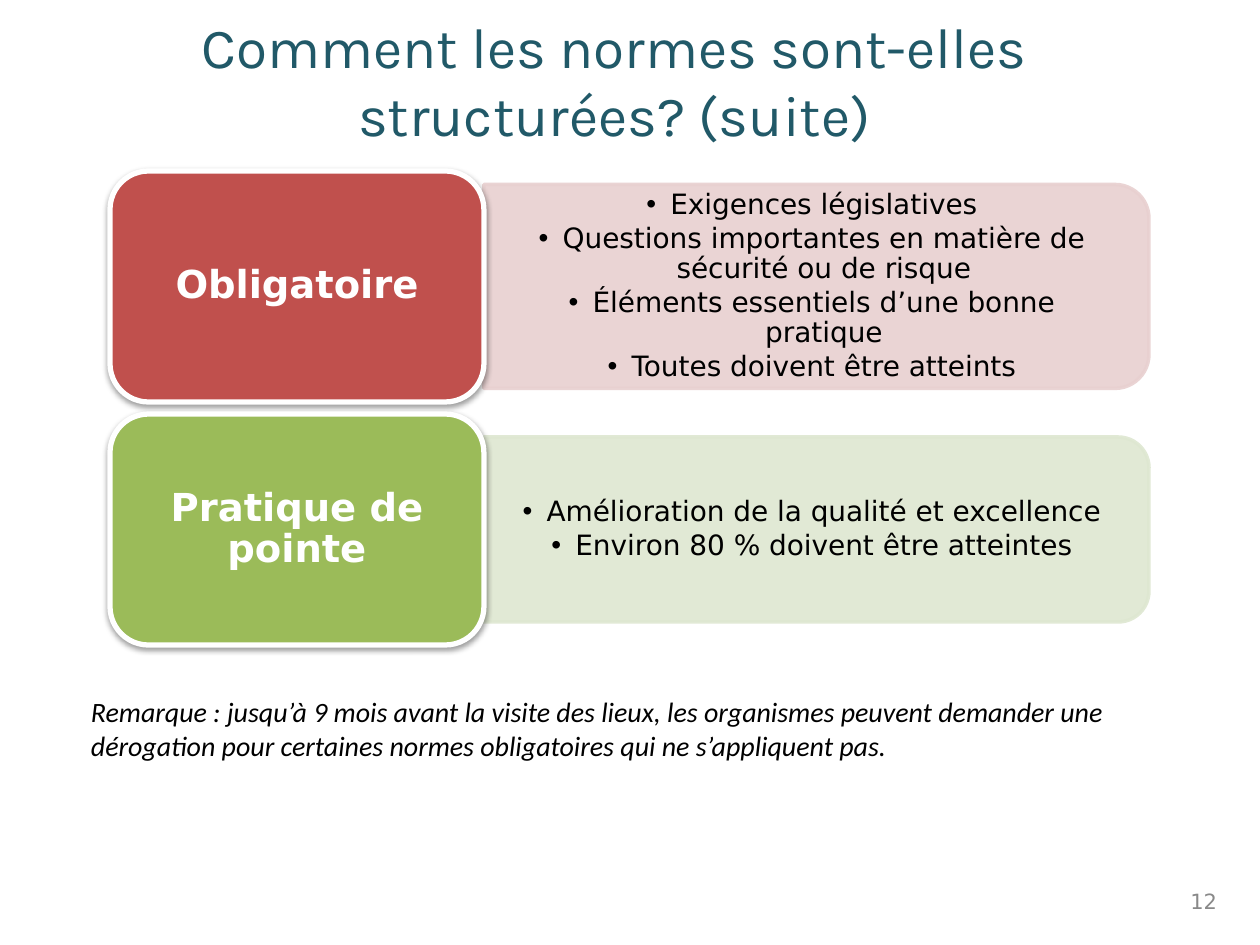
from lxml import etree
from pptx import Presentation, util as u
from pptx.dml.color import RGBColor
from pptx.enum import shapes, text
from pptx.oxml.ns import qn

PX = 914400 / 126
TEAL = RGBColor(0x21, 0x59, 0x68)
RED = RGBColor(0xC0, 0x50, 0x4D)
PALE_RED = RGBColor(0xE8, 0xD0, 0xD0)
GREEN = RGBColor(0x9B, 0xBB, 0x59)
PALE_GREEN = RGBColor(0xDE, 0xE7, 0xD1)
WHITE = RGBColor(255, 255, 255)
BLACK = RGBColor(0, 0, 0)
GREY = RGBColor(0x89, 0x89, 0x89)
SANS = "DejaVu Sans"
ALIGN = text.PP_ALIGN


def px(*lengths):
    return [u.Emu(round(n * PX)) for n in lengths]


def write(shape, lines, font=SANS, size=16, color=BLACK, bold=False, italic=False,
          align=ALIGN.CENTER, anchor=text.MSO_ANCHOR.MIDDLE, spacing=None,
          gap=0, bullet_indent=0, insets=(13, 6)):
    """Fill a shape with paragraphs in one format."""
    frame = shape.text_frame
    frame.word_wrap = True
    frame.auto_size = text.MSO_AUTO_SIZE.NONE
    frame.vertical_anchor = anchor
    frame.margin_left = frame.margin_right = px(insets[0])[0]
    frame.margin_top = frame.margin_bottom = px(insets[1])[0]
    frame.text = "\n".join(lines)
    for paragraph in frame.paragraphs:
        paragraph.alignment = align
        paragraph.line_spacing = spacing
        paragraph.space_before = u.Pt(0)
        paragraph.space_after = u.Pt(gap)
        if bullet_indent:
            props = paragraph._p.get_or_add_pPr()
            indent = px(bullet_indent)[0]
            props.set("marL", str(indent))
            props.set("indent", str(-indent))
            etree.SubElement(props, qn("a:buChar"), char="•")
        for run in paragraph.runs:
            run.font.name, run.font.size = font, u.Pt(size)
            run.font.bold, run.font.italic = bold, italic
            run.font.color.rgb = color


class StandardsSlide:
    def __init__(self, prs, layout):
        self.slide = prs.slides.add_slide(prs.slide_layouts[layout])

    def place(self, shape, left, top, width, height):
        shape.left, shape.top, shape.width, shape.height = px(left, top, width, height)
        return shape

    def title(self, box, words):
        write(self.place(self.slide.shapes.title, *box), [words],
              font="Karla", size=32.4, color=TEAL)

    def label(self, box, words, **style):
        write(self.slide.shapes.add_textbox(*px(*box)), [words], **style)

    def shape(self, kind, box, fill, line, weight):
        shape = self.slide.shapes.add_shape(kind, *px(*box))
        shape.shadow.inherit = False
        shape.fill.solid()
        shape.fill.fore_color.rgb = fill
        shape.line.color.rgb = line
        shape.line.width = u.Pt(weight)
        return shape

    def panel(self, left, middle, width, height, color):
        """Strip with rounded right corners: an upright shape turned by 90°."""
        box = (left + (width - height) / 2, middle - width / 2, height, width)
        panel = self.shape(shapes.MSO_SHAPE.ROUND_2_SAME_RECTANGLE, box, color, color, 2)
        panel.rotation = 90
        for tint in panel.element.spPr.iter(qn("a:srgbClr")):
            etree.SubElement(tint, qn("a:alpha"), val="90000")
        return panel

    def points(self, index, panel, box, lines):
        """Bulleted list in a body placeholder, lying over its panel."""
        body = self.place(self.slide.placeholders[index], *box)
        write(body, lines, spacing=0.9, gap=2, bullet_indent=24, insets=(34, 18))
        panel.element.addnext(body.element)

    def tile(self, box, words, color):
        tile = self.shape(shapes.MSO_SHAPE.ROUNDED_RECTANGLE, box, color, WHITE, 3)
        effects = tile.element.spPr.find(qn("a:effectLst"))
        shadow = etree.SubElement(effects, qn("a:outerShdw"), blurRad="40000",
                                  dist="20000", dir="5400000", rotWithShape="0")
        tint = etree.SubElement(shadow, qn("a:srgbClr"), val="000000")
        etree.SubElement(tint, qn("a:alpha"), val="38000")
        write(tile, [words], size=22, color=WHITE, bold=True, spacing=0.9)


def main():
    prs = Presentation()
    prs.slide_width, prs.slide_height = px(1260, 945)
    page = StandardsSlide(prs, layout=3)
    page.title((66, 19, 1097, 121), "Comment les normes sont-elles structurées? (suite)")

    # Kinds of standard: tile on the left, criteria on the right
    categories = [
        ("Obligatoire", RED, PALE_RED, 204,
         ["Exigences législatives",
          "Questions importantes en matière de sécurité ou de risque",
          "Éléments essentiels d’une bonne pratique",
          "Toutes doivent être atteints"]),
        ("Pratique de pointe", GREEN, PALE_GREEN, 185,
         ["Amélioration de la qualité et excellence",
          "Environ 80 % doivent être atteintes"]),
    ]
    tile_left, tile_width, tile_height, pitch = 110, 374, 231, 243
    criteria_left = tile_left + tile_width
    for row, (name, color, pale, height, criteria) in enumerate(categories):
        top = 171 + row * pitch
        middle = top + tile_height / 2
        panel = page.panel(criteria_left, middle, 665, height, pale)
        page.points(row + 1, panel,
                    (criteria_left, middle - height / 2 + 10, 656, height - 20), criteria)
        page.tile((tile_left, top, tile_width, tile_height), name, color)

    # Remark and page number
    page.label((78, 689, 1109, 81),
               "Remarque : jusqu’à 9 mois avant la visite des lieux, les organismes peuvent "
               "demander une dérogation pour certaines normes obligatoires qui ne "
               "s’appliquent pas.",
               font="Calibri", italic=True, align=ALIGN.LEFT, anchor=text.MSO_ANCHOR.TOP)
    page.label((1163, 876, 67, 50), "12", size=12, color=GREY, align=ALIGN.RIGHT)

    prs.save("out.pptx")


if __name__ == "__main__":
    main()
